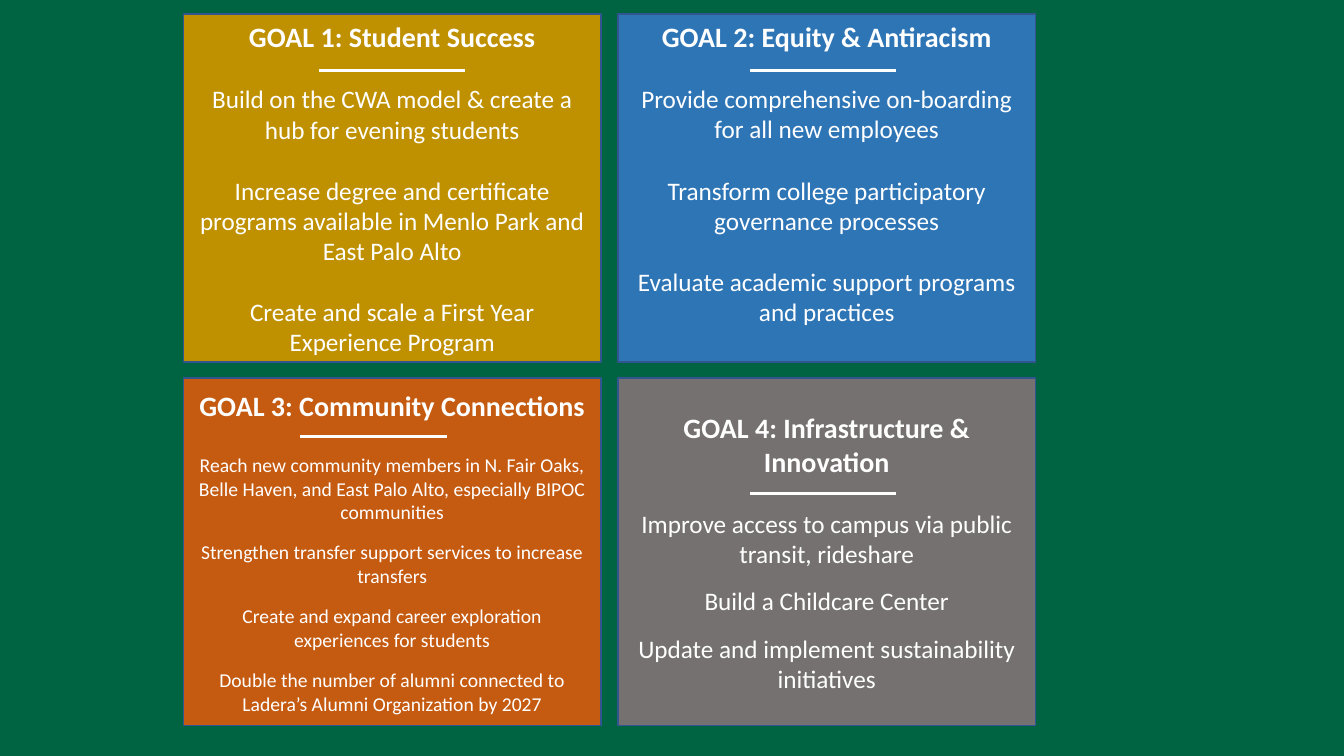
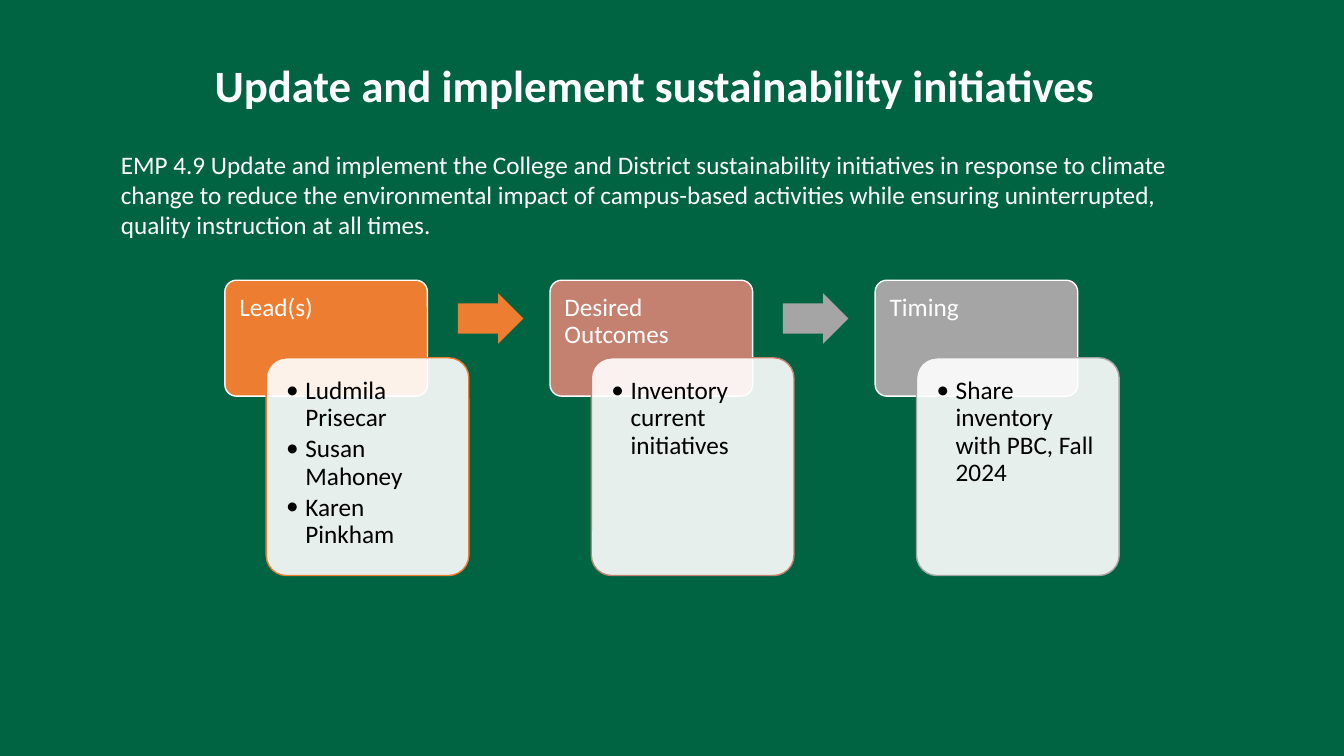
import pptx
import pptx.dml.color
import pptx.enum.shapes
import pptx.enum.text
import pptx.oxml.ns
import pptx.util
from lxml import etree

Inches = pptx.util.Inches
Pt = pptx.util.Pt
RGBColor = pptx.dml.color.RGBColor
SHAPE = pptx.enum.shapes.MSO_SHAPE
ALIGN = pptx.enum.text.PP_ALIGN
ANCHOR = pptx.enum.text.MSO_ANCHOR
qn = pptx.oxml.ns.qn

GREEN = RGBColor(0x00, 0x63, 0x42)
WHITE = RGBColor(0xFF, 0xFF, 0xFF)
BLACK = RGBColor(0x00, 0x00, 0x00)
NAVY = RGBColor(0x32, 0x54, 0x91)
GOLD = RGBColor(0xBF, 0x90, 0x00)
BLUE = RGBColor(0x2E, 0x75, 0xB6)
RUST = RGBColor(0xC5, 0x5A, 0x11)
STONE = RGBColor(0x76, 0x71, 0x71)
ORANGE = RGBColor(0xED, 0x7D, 0x31)
ROSE = RGBColor(0xC4, 0x81, 0x70)
GREY = RGBColor(0xA5, 0xA5, 0xA5)

FONT = "Calibri"
BLANK_LAYOUT = 6

# Goal cards: (title, fill, body size, paragraph gap, bottom inset, rule x, rule y, items)
GOALS = [
    ("GOAL 1: Student Success", GOLD, 18, 22, 0.05, 1.34, 0.56, [
        "Build on the CWA model & create a hub for evening students",
        "Increase degree and certificate programs available in Menlo Park and East Palo Alto",
        "Create and scale a First Year Experience Program"]),
    ("GOAL 2: Equity & Antiracism", BLUE, 18, 22, 0.35, 1.31, 0.56, [
        "Provide comprehensive on-boarding for all new employees",
        "Transform college participatory governance processes",
        "Evaluate academic support programs and practices"]),
    ("GOAL 3: Community Connections", RUST, 14, 12, 0.05, 1.16, 0.58, [
        "Reach new community members in N. Fair Oaks, Belle Haven, and East Palo Alto, "
        "especially BIPOC communities",
        "Strengthen transfer support services to increase transfers",
        "Create and expand career exploration experiences for students",
        "Double the number of alumni connected to Ladera’s Alumni Organization by 2027"]),
    ("GOAL 4: Infrastructure & Innovation", STONE, 18, 12, 0.05, 1.31, 1.15, [
        "Improve access to campus via public transit, rideshare",
        "Build a Childcare Center",
        "Update and implement sustainability initiatives"]),
]
CARD_LEFT, CARD_TOP, CARD_W, CARD_H = 1.82, 0.14, 4.14, 3.45
CARD_STEP_X, CARD_STEP_Y = 4.31, 3.61
RULE_W = 1.45
TITLE_GAP = 22

STEPS = [
    ("Lead(s)", ORANGE, ["Ludmila Prisecar", "Susan Mahoney", "Karen Pinkham"]),
    ("Desired Outcomes", ROSE, ["Inventory current initiatives"]),
    ("Timing", GREY, ["Share inventory with PBC, Fall 2024"]),
]
ARROW_COLORS = [ORANGE, GREY]
STEP_LEFT, STEP_TOP, STEP_W = 2.23, 2.78, 2.01
STEP_PITCH = (8.68 - STEP_LEFT) / 2


def add_slide(prs):
    s = prs.slides.add_slide(prs.slide_layouts[BLANK_LAYOUT])
    s.background.fill.solid()
    s.background.fill.fore_color.rgb = GREEN
    return s


def add_paragraph(tf, text, size=18, color=WHITE, bold=False, align=ALIGN.LEFT,
                  before=0, after=0, spacing=None, bullet=False):
    """Fill the frame's first paragraph, or append one if that is taken."""
    p = tf.paragraphs[0]
    if p.runs:
        p = tf.add_paragraph()
    p.alignment = align
    p.space_before, p.space_after = Pt(before), Pt(after)
    if spacing:
        p.line_spacing = spacing
    if bullet:
        pPr = p._p.get_or_add_pPr()
        pPr.set("marL", str(Inches(0.19)))
        pPr.set("indent", str(-Inches(0.19)))
        etree.SubElement(pPr, qn("a:buFont")).set("typeface", FONT)
        etree.SubElement(pPr, qn("a:buChar")).set("char", "•")
    r = p.add_run()
    r.text = text
    r.font.name, r.font.size, r.font.bold = FONT, Pt(size), bold
    r.font.color.rgb = color


def set_frame(tf, anchor, left, top, right, bottom):
    tf.word_wrap = True
    tf.vertical_anchor = anchor
    tf.margin_left, tf.margin_top = Inches(left), Inches(top)
    tf.margin_right, tf.margin_bottom = Inches(right), Inches(bottom)


def add_box(s, kind, x, y, w, h, fill, line=None, alpha=None, adjust=()):
    """Draw a preset shape; alpha is the fill's opacity in percent."""
    sp = s.shapes.add_shape(kind, Inches(x), Inches(y), Inches(w), Inches(h))
    sp.shadow.inherit = False
    sp.fill.solid()
    sp.fill.fore_color.rgb = fill
    if alpha is not None:
        clr = sp._element.spPr.find(qn("a:solidFill")).find(qn("a:srgbClr"))
        etree.SubElement(clr, qn("a:alpha")).set("val", str(alpha * 1000))
    if line is None:
        sp.line.fill.background()
    else:
        sp.line.color.rgb = line
        sp.line.width = Pt(1)
    for i, value in enumerate(adjust):
        sp.adjustments[i] = value
    return sp


def add_rule(s, x, y):
    cx = s.shapes.add_connector(pptx.enum.shapes.MSO_CONNECTOR.STRAIGHT,
                                Inches(x), Inches(y), Inches(x + RULE_W), Inches(y))
    cx.line.color.rgb = WHITE
    cx.line.width = Pt(2.25)
    etree.SubElement(cx._element.spPr, qn("a:effectLst"))


def add_text_box(s, x, y, w, h, text, **fmt):
    tf = s.shapes.add_textbox(Inches(x), Inches(y), Inches(w), Inches(h)).text_frame
    tf.word_wrap = True
    add_paragraph(tf, text, **fmt)


def add_goal_card(s, x, y, goal):
    title, fill, size, gap, bottom, rule_x, rule_y, items = goal
    tf = add_box(s, SHAPE.RECTANGLE, x, y, CARD_W, CARD_H, fill, NAVY).text_frame
    set_frame(tf, ANCHOR.MIDDLE, 0.1, 0.05, 0.1, bottom)
    add_paragraph(tf, title, size=20, bold=True, align=ALIGN.CENTER)
    for i, item in enumerate(items):
        add_paragraph(tf, item, size=size, align=ALIGN.CENTER,
                      before=gap if i else TITLE_GAP)
    add_rule(s, x + rule_x, y + rule_y)


def add_step(s, x, heading, color, items):
    """Draw a coloured heading card with a pale detail card overlapping it."""
    tf = add_box(s, SHAPE.ROUNDED_RECTANGLE, x, STEP_TOP, STEP_W, 1.15,
                 color, WHITE, adjust=[0.1]).text_frame
    set_frame(tf, ANCHOR.TOP, 0.11, 0.11, 0.11, 0.07)
    add_paragraph(tf, heading, spacing=0.9)

    tf = add_box(s, SHAPE.ROUNDED_RECTANGLE, x + 0.41, STEP_TOP + 0.77, STEP_W, 2.16,
                 WHITE, color, alpha=90, adjust=[0.1]).text_frame
    set_frame(tf, ANCHOR.TOP, 0.14, 0.14, 0.14, 0.14)
    for item in items:
        add_paragraph(tf, item, color=BLACK, spacing=0.9, after=2.7, bullet=True)


def build_goals(prs):
    s = add_slide(prs)
    for i, goal in enumerate(GOALS):
        row, col = divmod(i, 2)
        add_goal_card(s, CARD_LEFT + col * CARD_STEP_X, CARD_TOP + row * CARD_STEP_Y, goal)


def build_initiative(prs):
    s = add_slide(prs)
    for i, step in enumerate(STEPS):
        add_step(s, STEP_LEFT + i * STEP_PITCH, *step)
    for i, color in enumerate(ARROW_COLORS):
        add_box(s, SHAPE.RIGHT_ARROW, STEP_LEFT + 2.31 + i * STEP_PITCH, 2.91,
                0.65, 0.5, color, adjust=[0.6, 0.5])
    add_text_box(s, 1.1, 1.43, 10.79, 1.01,
                 "EMP 4.9 Update and implement the College and District sustainability "
                 "initiatives in response to climate change to reduce the environmental "
                 "impact of campus-based activities while ensuring uninterrupted, quality "
                 "instruction at all times.", after=6)
    add_text_box(s, 0.6, 0.52, 11.79, 0.64, "Update and implement sustainability initiatives",
                 size=32, bold=True, align=ALIGN.CENTER, after=6)


def main():
    prs = pptx.Presentation()
    prs.slide_width, prs.slide_height = Inches(13.33), Inches(7.5)
    build_goals(prs)
    build_initiative(prs)
    prs.save("out.pptx")


if __name__ == "__main__":
    main()
